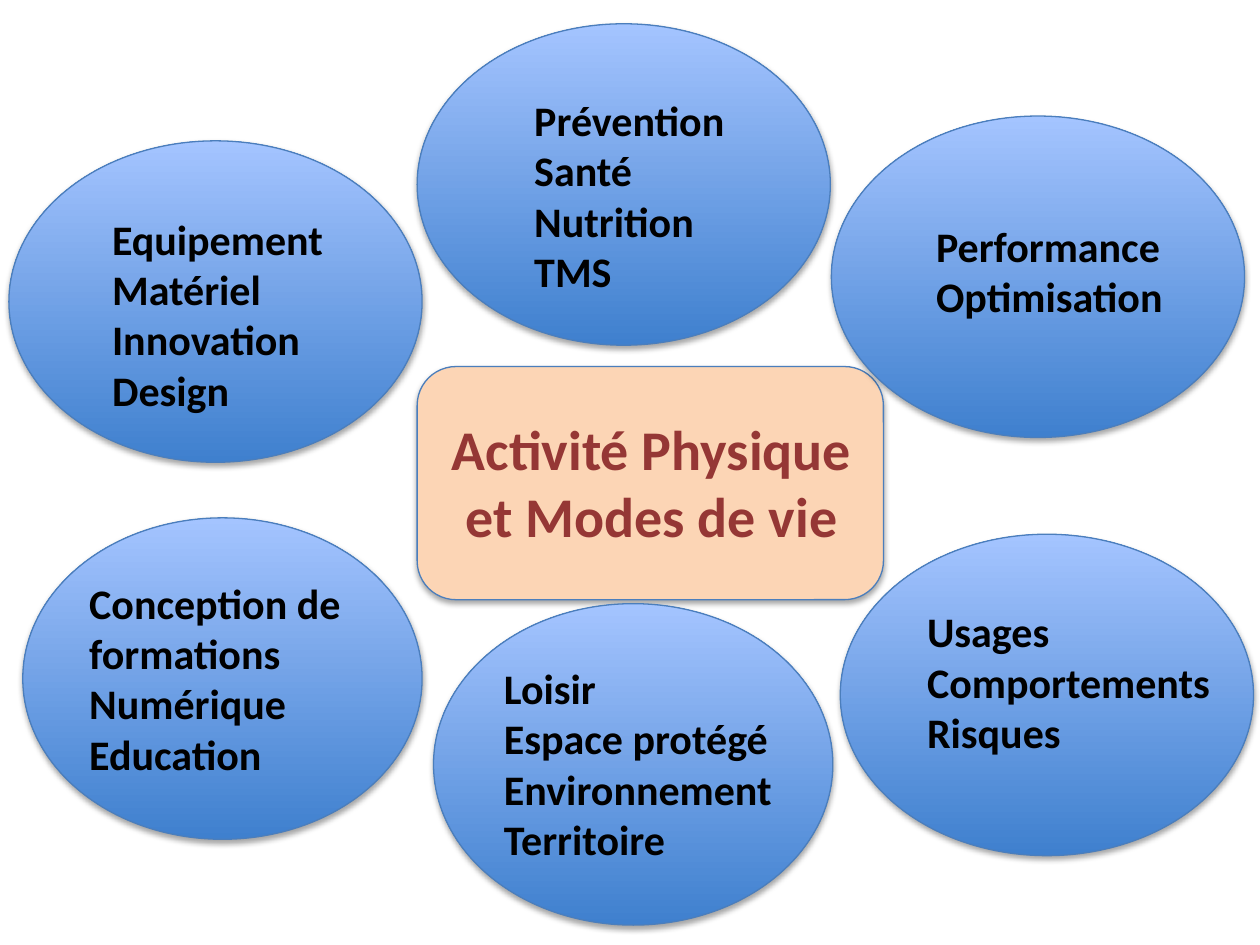
import lxml.etree
import pptx
import pptx.dml.color
import pptx.enum.shapes
import pptx.enum.text
import pptx.oxml
import pptx.oxml.ns
import pptx.util
from pptx.util import Cm

SHAPES = pptx.enum.shapes.MSO_SHAPE
ALIGN = pptx.enum.text.PP_ALIGN


def color(hex_value):
    return pptx.dml.color.RGBColor.from_string(hex_value)


def write_text(frame, lines, size=24, ink="000000", align=ALIGN.LEFT, wrap=True):
    frame.word_wrap = wrap
    frame.auto_size = pptx.enum.text.MSO_AUTO_SIZE.SHAPE_TO_FIT_TEXT
    frame.vertical_anchor = pptx.enum.text.MSO_ANCHOR.TOP
    for index, line in enumerate(lines):
        paragraph = frame.add_paragraph() if index else frame.paragraphs[0]
        paragraph.alignment = align
        run = paragraph.add_run()
        run.text = line
        run.font.name = "Calibri"
        run.font.size = pptx.util.Pt(size)
        run.font.bold = True
        run.font.color.rgb = color(ink)


class ThemeMap:
    outline = "4B7EBC"
    gradient = ("3F80CE", "A4C4FF")
    center_fill = "FCD5B5"
    title_ink = "953735"

    def __init__(self, slide):
        self.slide = slide

    def panel(self, kind, box):
        panel = self.slide.shapes.add_shape(kind, *map(Cm, box))
        panel.line.color.rgb = color(self.outline)
        panel.line.width = pptx.util.Pt(0.75)
        self.soft_shadow(panel)
        return panel

    def soft_shadow(self, panel):
        panel.shadow.inherit = False
        qn = pptx.oxml.ns.qn
        effects = panel._element.spPr.find(qn("a:effectLst"))
        shadow = lxml.etree.SubElement(
            effects, qn("a:outerShdw"), blurRad="40000", dist="23000",
            dir="5400000", rotWithShape="0")
        black = lxml.etree.SubElement(shadow, qn("a:srgbClr"), val="000000")
        lxml.etree.SubElement(black, qn("a:alpha"), val="35000")

    def center(self, box):
        center = self.panel(SHAPES.ROUNDED_RECTANGLE, box)
        center.fill.solid()
        center.fill.fore_color.rgb = color(self.center_fill)

    def bubble(self, box):
        bubble = self.panel(SHAPES.OVAL, box)
        bubble.fill.gradient()
        bubble.fill.gradient_angle = 90
        for stop, shade in zip(bubble.fill.gradient_stops, self.gradient):
            stop.color.rgb = color(shade)

    def topics(self, box, lines, wrap):
        label = self.slide.shapes.add_textbox(*map(Cm, box))
        write_text(label.text_frame, lines, wrap=wrap)

    def title(self, box, text):
        title = self.slide.shapes.title
        title.left, title.top, title.width, title.height = map(Cm, box)
        write_text(title.text_frame, [text], size=32, ink=self.title_ink,
                   align=ALIGN.CENTER)
        self.slide.shapes._spTree.append(title._element)


WIDE, NARROW, BUBBLE_HEIGHT = 8.33, 8.05, 6.48

THEMES = [
    (0.18, 2.84, WIDE, (2.01, 4.17, 4.83, 4.37), False,
     ["Equipement", "Matériel", "Innovation", "Design"]),
    (8.41, 0.48, WIDE, (10.52, 1.78, 4.42, 4.37), False,
     ["Prévention", "Santé", "Nutrition", "TMS"]),
    (16.76, 2.34, WIDE, (18.62, 4.32, 5.11, 2.31), False,
     ["Performance", "Optimisation"]),
    (0.46, 10.44, NARROW, (1.55, 11.51, 6.83, 4.37), True,
     ["Conception de formations", "Numérique", "Education"]),
    (16.94, 10.77, WIDE, (18.44, 12.09, 6.3, 3.33), False,
     ["Usages", "Comportements", "Risques"]),
    (8.74, 12.17, NARROW, (9.91, 13.23, 6.83, 4.37), True,
     ["Loisir", "Espace protégé", "Environnement", "Territoire"]),
]


def main():
    deck = pptx.Presentation()
    deck.slide_width, deck.slide_height = Cm(25.4), Cm(19.05)
    theme_map = ThemeMap(deck.slides.add_slide(deck.slide_layouts[5]))
    theme_map.center((8.41, 7.39, 9.4, 4.7))
    for left, top, width, label_box, wrap, lines in THEMES:
        theme_map.bubble((left, top, width, BUBBLE_HEIGHT))
        theme_map.topics(label_box, lines, wrap)
    theme_map.title((8.48, 8.23, 9.32, 3), "Activité Physique et Modes de vie")
    deck.save("out.pptx")


if __name__ == "__main__":
    main()
